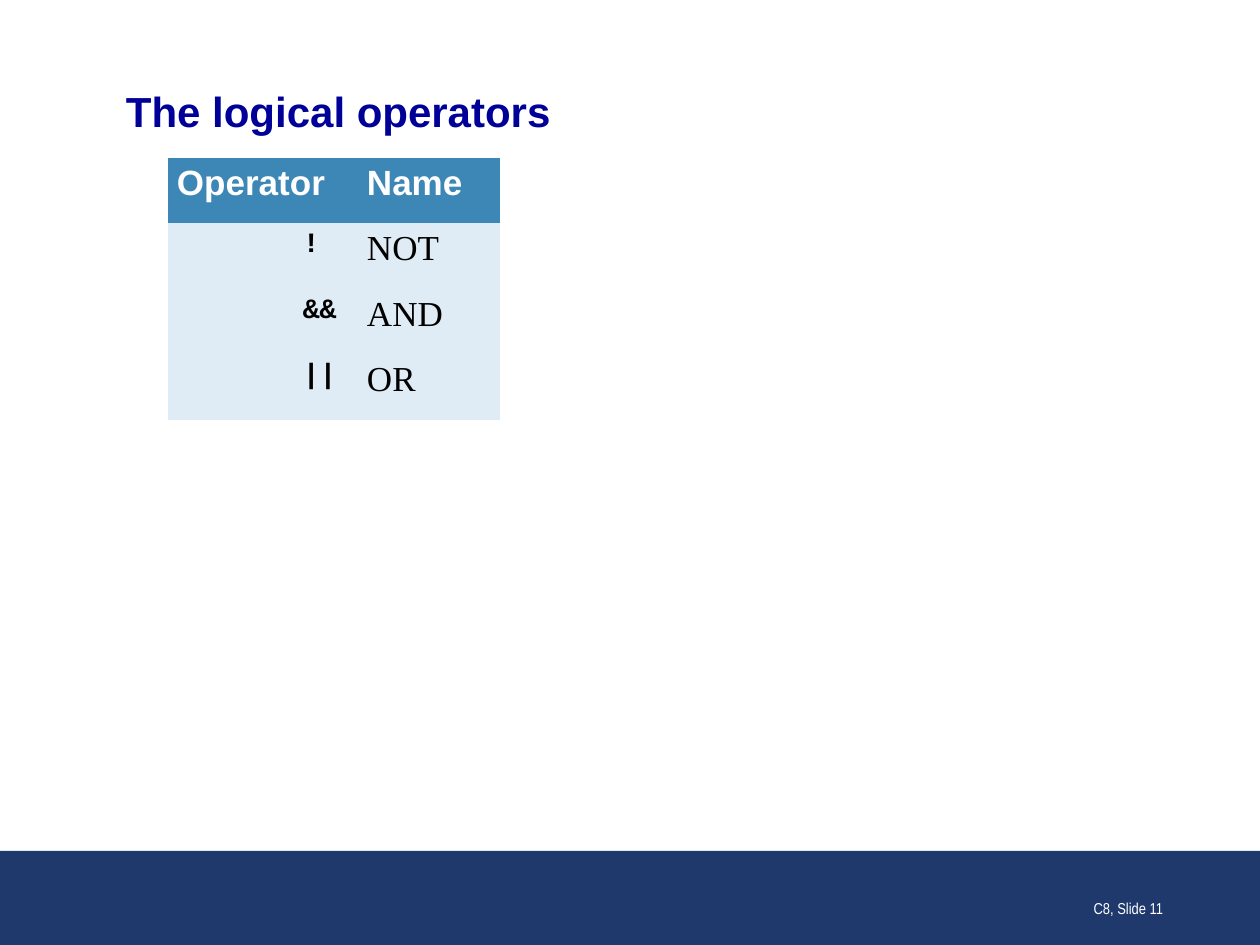
from lxml import etree
from pptx import Presentation
from pptx import util as u
from pptx.dml.color import RGBColor
from pptx.enum import shapes, text
from pptx.oxml.ns import qn

PLAIN = "{2D5ABB26-0587-4C30-8999-92F81FD0307C}"  # no style, no grid


def px(n):
    return u.Emu(n * u.Inches(1) // 126)


def color(code):
    return RGBColor.from_string(code)


class Deck:
    """Holds the style and the current slide."""

    navy, title, head, body = "20396D", "000099", "3D87B7", "DFECF5"
    white, black = "FFFFFF", "000000"

    def __init__(self):
        self.prs = Presentation()
        self.prs.slide_width, self.prs.slide_height = px(1260), px(945)
        self.slide = self.prs.slides.add_slide(self.prs.slide_layouts[6])

    def bar(self, x, y, w, h, fill):
        box = self.slide.shapes.add_shape(
            shapes.MSO_SHAPE.RECTANGLE, px(x), px(y), px(w), px(h))
        box.shadow.inherit = False
        box.fill.solid()
        box.fill.fore_color.rgb = color(fill)
        box.line.fill.background()

    def words(self, para, line, font, size, ink, bold=False, after=0, tab=None):
        para.text = line
        para.space_after = u.Pt(after)
        if tab:
            stops = etree.SubElement(para._p.get_or_add_pPr(), qn("a:tabLst"))
            etree.SubElement(stops, qn("a:tab"), pos=str(px(tab)), algn="l")
        face = para.font
        face.name, face.size, face.bold = font, u.Pt(size), bold
        face.color.rgb = color(ink)

    def label(self, x, y, w, h, line, font, size, ink, bold=False,
              anchor=text.MSO_ANCHOR.MIDDLE, align=text.PP_ALIGN.LEFT, pad=(0, 0)):
        box = self.slide.shapes.add_textbox(px(x), px(y), px(w), px(h))
        frame = box.text_frame
        frame.word_wrap = True
        frame.vertical_anchor = anchor
        frame.margin_left = frame.margin_right = px(pad[0])
        frame.margin_top = frame.margin_bottom = px(pad[1])
        para = frame.paragraphs[0]
        para.alignment = align
        self.words(para, line, font, size, ink, bold)

    def cell(self, cell, fill, line, *look, **more):
        cell.fill.solid()
        cell.fill.fore_color.rgb = color(fill)
        cell.margin_left = cell.margin_right = px(9)
        cell.margin_top = cell.margin_bottom = px(6)
        self.words(cell.text_frame.paragraphs[0], line, *look, after=6, **more)

    def table(self, x, y, cols, h, names, rows):
        count = len(rows) + 1
        grid = self.slide.shapes.add_table(
            count, len(cols), px(x), px(y), px(sum(cols)), px(h)).table
        grid.first_row = grid.horz_banding = False
        grid._tbl.tblPr.find(qn("a:tableStyleId")).text = PLAIN
        for col, w in zip(grid.columns, cols):
            col.width = px(w)
        for row in grid.rows:
            row.height = px(h) // count
        for c, name in enumerate(names):
            self.cell(grid.cell(0, c), self.head, name,
                      "Arial", 20, self.white, True)
        for r, (sign, name) in enumerate(rows, 1):
            self.cell(grid.cell(r, 0), self.body, "\t" + sign,
                      "Courier New", 16, self.black, True, tab=126)
            self.cell(grid.cell(r, 1), self.body, name,
                      "Times New Roman", 20, self.black)


def main():
    deck = Deck()

    # Footer band
    deck.bar(0, 851, 1260, 94, deck.navy)

    # Title
    deck.label(126, 86, 1008, 50, "The logical operators",
               "Arial", 24, deck.title, True)

    # Operators
    deck.table(168, 158, (190, 142), 262, ("Operator", "Name"),
               (("!", "NOT"), ("&&", "AND"), ("||", "OR")))

    # Slide number
    deck.label(914, 861, 262, 63, "C8, Slide 11", "Arial Narrow", 9, deck.white,
               anchor=text.MSO_ANCHOR.BOTTOM, align=text.PP_ALIGN.RIGHT,
               pad=(13, 6))

    deck.prs.save("out.pptx")


if __name__ == "__main__":
    main()
